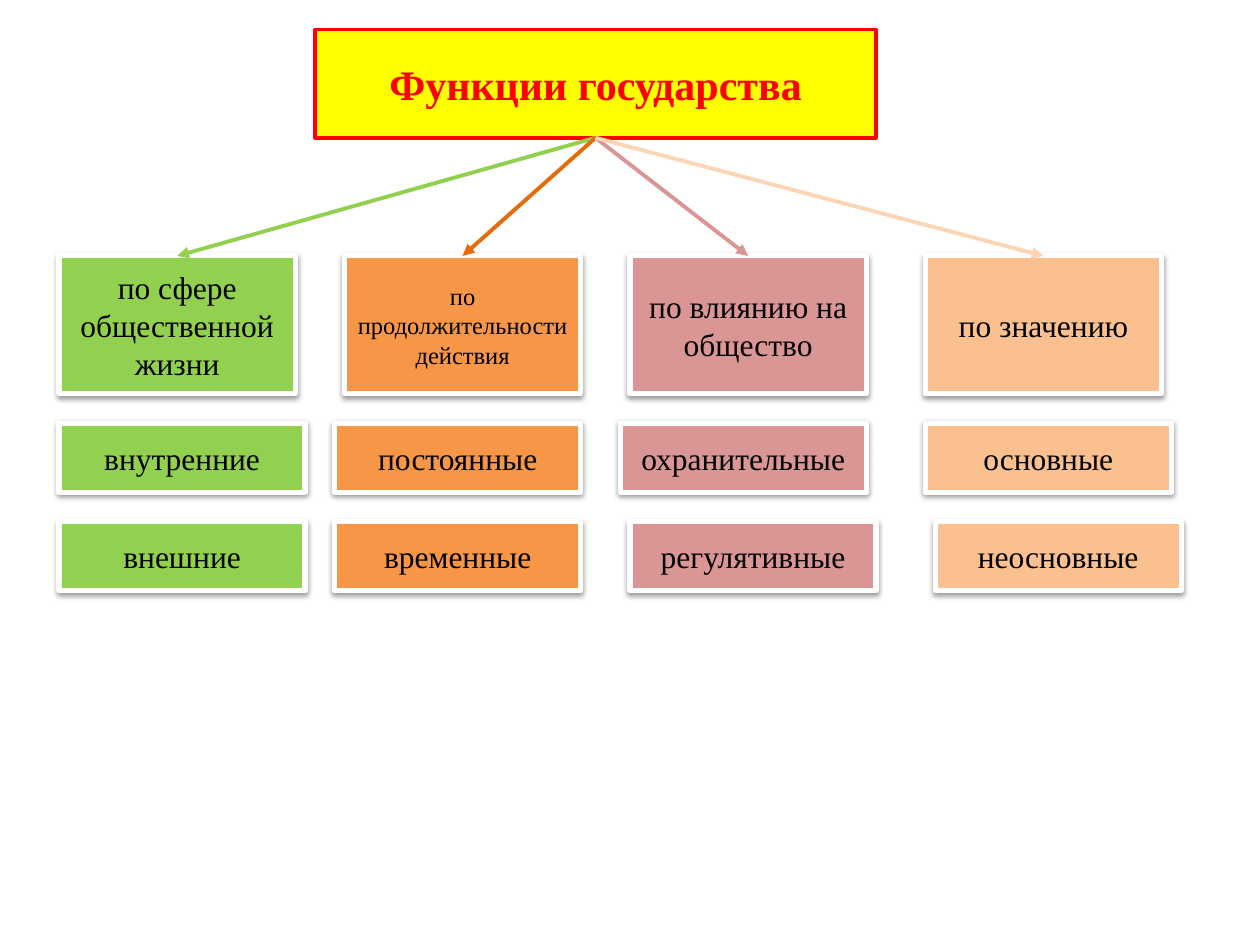
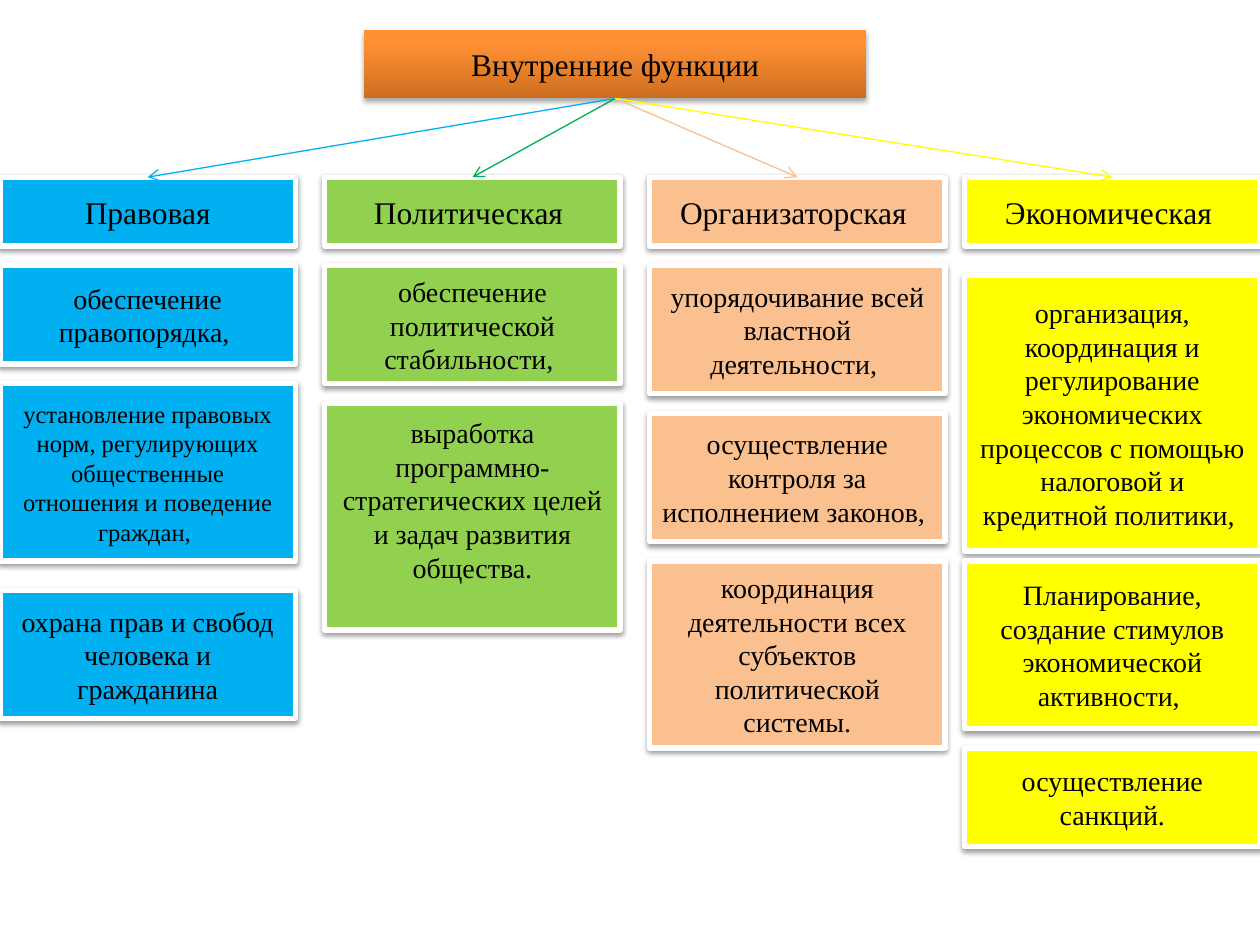
from collections import namedtuple
from copy import deepcopy

from pptx import Presentation
from pptx.dml.color import RGBColor
from pptx.enum.shapes import MSO_CONNECTOR, MSO_SHAPE
from pptx.enum.text import MSO_ANCHOR, MSO_AUTO_SIZE, PP_ALIGN
from pptx.oxml import parse_xml
from pptx.oxml.ns import nsdecls, qn
from pptx.util import Inches, Pt

SLIDE_WIDTH, SLIDE_HEIGHT = Inches(10), Inches(7.5)
GRID_COLUMNS, GRID_ROWS = 128, 96
FONT = "Times New Roman"

BLACK = RGBColor(0x00, 0x00, 0x00)
WHITE = RGBColor(0xFF, 0xFF, 0xFF)
RED = RGBColor(0xFF, 0x00, 0x00)
YELLOW = RGBColor(0xFF, 0xFF, 0x00)
LIME = RGBColor(0x92, 0xD0, 0x50)
GREEN = RGBColor(0x00, 0xB0, 0x50)
ORANGE = RGBColor(0xF7, 0x96, 0x46)
DARK_ORANGE = RGBColor(0xE4, 0x6C, 0x0A)
ROSE = RGBColor(0xD9, 0x96, 0x94)
PEACH = RGBColor(0xFA, 0xC0, 0x90)
PALE_PEACH = RGBColor(0xFC, 0xD5, 0xB5)
BLUE = RGBColor(0x00, 0xB0, 0xF0)
TITLE_GRADIENT = (
    (0, RGBColor(0xCC, 0x6E, 0x20)),
    (0.8, RGBColor(0xFF, 0x90, 0x34)),
    (1, RGBColor(0xFF, 0x91, 0x36)),
)

Box = namedtuple("Box", "left top width height")
Card = namedtuple("Card", "text shift top width height size spare", defaults=(16, 0))
Branch = namedtuple("Branch", "left fill arrow cards")
ArrowStyle = namedtuple("ArrowStyle", "head width")


def across(columns):
    return round(SLIDE_WIDTH * columns / GRID_COLUMNS)


def down(rows):
    return round(SLIDE_HEIGHT * rows / GRID_ROWS)


def to_lengths(box):
    return across(box.left), down(box.top), across(box.width), down(box.height)


def write(shape, text, size, color=BLACK, bold=False):
    frame = shape.text_frame
    frame.word_wrap = True
    frame.auto_size = MSO_AUTO_SIZE.NONE
    frame.vertical_anchor = MSO_ANCHOR.MIDDLE
    paragraph = frame.paragraphs[0]
    paragraph.alignment = PP_ALIGN.CENTER
    run = paragraph.add_run()
    run.text = text
    run.font.name = FONT
    run.font.size = Pt(size)
    run.font.bold = bold
    run.font.color.rgb = color


def outline(shape, color, width):
    shape.line.color.rgb = color
    shape.line.width = Pt(width)


def cast_shadow(shape, distance, opacity):
    shape.shadow.inherit = False
    effects = shape.element.spPr.find(qn("a:effectLst"))
    effects.append(parse_xml(
        f'<a:outerShdw {nsdecls("a")} blurRad="{Pt(3.1)}" dist="{Pt(distance)}" '
        f'dir="5400000" rotWithShape="0"><a:srgbClr val="000000">'
        f'<a:alpha val="{opacity * 1000}"/></a:srgbClr></a:outerShdw>'
    ))


def place_title(slide, box, text, size, color=BLACK, bold=False):
    title = slide.shapes.title
    title.left, title.top, title.width, title.height = to_lengths(box)
    write(title, text, size, color, bold)
    return title


def paint_gradient(shape, stops):
    shape.fill.gradient()
    shape.fill.gradient_angle = 90
    stop_list = shape.element.spPr.find(".//" + qn("a:gsLst"))
    while len(stop_list) < len(stops):
        stop_list.append(deepcopy(stop_list[-1]))
    for stop, (position, color) in zip(shape.fill.gradient_stops, stops):
        stop.position = position
        stop.color.rgb = color


def place_card(slide, box, card, fill):
    tile = slide.shapes.add_shape(MSO_SHAPE.RECTANGLE, *to_lengths(box))
    tile.fill.solid()
    tile.fill.fore_color.rgb = fill
    outline(tile, WHITE, 3)
    cast_shadow(tile, 1.6, 38)
    write(tile, card.text, card.size)
    tile.text_frame.margin_bottom = Inches(0.05 + card.spare)


def place_arrow(slide, source, target, color, style):
    start = across(source.left + source.width / 2), down(source.top + source.height)
    end = across(target.left + target.width / 2), down(target.top)
    arrow = slide.shapes.add_connector(MSO_CONNECTOR.STRAIGHT, *start, *end)
    outline(arrow, color, style.width)
    properties = arrow.element.spPr
    properties.find(qn("a:ln")).append(
        parse_xml(f'<a:tailEnd {nsdecls("a")} type="{style.head}"/>'))
    properties.append(parse_xml(f'<a:effectLst {nsdecls("a")}/>'))


def place_branches(slide, title_box, top, branches, arrow_style):
    for branch in branches:
        boxes = [Box(branch.left + card.shift, top + card.top, card.width, card.height)
                 for card in branch.cards]
        for box, card in zip(boxes, branch.cards):
            place_card(slide, box, card, branch.fill)
        place_arrow(slide, title_box, boxes[0], branch.arrow, arrow_style)


def kinds(heading, first, second, shifts=(0, 0), heading_size=18):
    return [
        Card(heading, 0, 0, 24, 14, heading_size),
        Card(first, shifts[0], 17, 25, 7, 18),
        Card(second, shifts[1], 27, 25, 7, 18),
    ]


def functions(heading, *details):
    return [Card(heading, 0, 0, 30, 7, 18)] + [
        Card(text, 0, top, 30, height, *extra) for text, top, height, *extra in details
    ]


def state_functions_slide(slide):
    title_box = Box(32, 3, 57, 11)
    title = place_title(slide, title_box, "Функции государства", 24, RED, True)
    title.fill.solid()
    title.fill.fore_color.rgb = YELLOW
    outline(title, RED, 2)
    place_branches(slide, title_box, 26, [
        Branch(6, LIME, LIME, kinds(
            "по сфере общественной жизни", "внутренние", "внешние")),
        Branch(35, ORANGE, DARK_ORANGE, kinds(
            "по продолжительности действия", "постоянные", "временные", (-1, -1), 14)),
        Branch(64, ROSE, ROSE, kinds(
            "по влиянию на общество", "охранительные", "регулятивные", (-1, 0))),
        Branch(94, PEACH, PALE_PEACH, kinds(
            "по значению", "основные", "неосновные", (0, 1))),
    ], ArrowStyle("triangle", 2.25))


def internal_functions_slide(slide):
    title_box = Box(37, 3, 51, 7)
    title = place_title(slide, title_box, "Внутренние функции", 18)
    paint_gradient(title, TITLE_GRADIENT)
    title.line.fill.background()
    cast_shadow(title, 1.8, 35)
    place_branches(slide, title_box, 18, [
        Branch(0, BLUE, BLUE, functions(
            "Правовая",
            ("обеспечение правопорядка, ", 9, 10),
            ("установление правовых норм, регулирующих общественные отношения "
             "и поведение граждан, ", 21, 18, 14),
            ("охрана прав и свобод человека и гражданина", 42, 13))),
        Branch(33, LIME, GREEN, functions(
            "Политическая ",
            ("обеспечение политической стабильности, ", 9, 12),
            ("выработка программно-стратегических целей и задач развития общества.",
             23, 23, 16, 0.27))),
        Branch(66, PEACH, PEACH, functions(
            "Организаторская ",
            ("упорядочивание всей властной деятельности, ", 9, 13),
            ("осуществление контроля за исполнением законов, ", 24, 13),
            ("координация деятельности всех субъектов политической системы.", 39, 19))),
        Branch(98, YELLOW, YELLOW, functions(
            "Экономическая ",
            ("организация, координация и регулирование экономических процессов "
             "с помощью налоговой и кредитной политики, ", 10, 28),
            ("Планирование, создание стимулов экономической активности, ", 39, 17),
            ("осуществление санкций.", 58, 10))),
    ], ArrowStyle("arrow", 0.75))


def main():
    deck = Presentation()
    deck.slide_width, deck.slide_height = SLIDE_WIDTH, SLIDE_HEIGHT
    title_only = deck.slide_layouts[5]
    for build in (state_functions_slide, internal_functions_slide):
        build(deck.slides.add_slide(title_only))
    deck.save("out.pptx")


if __name__ == "__main__":
    main()
